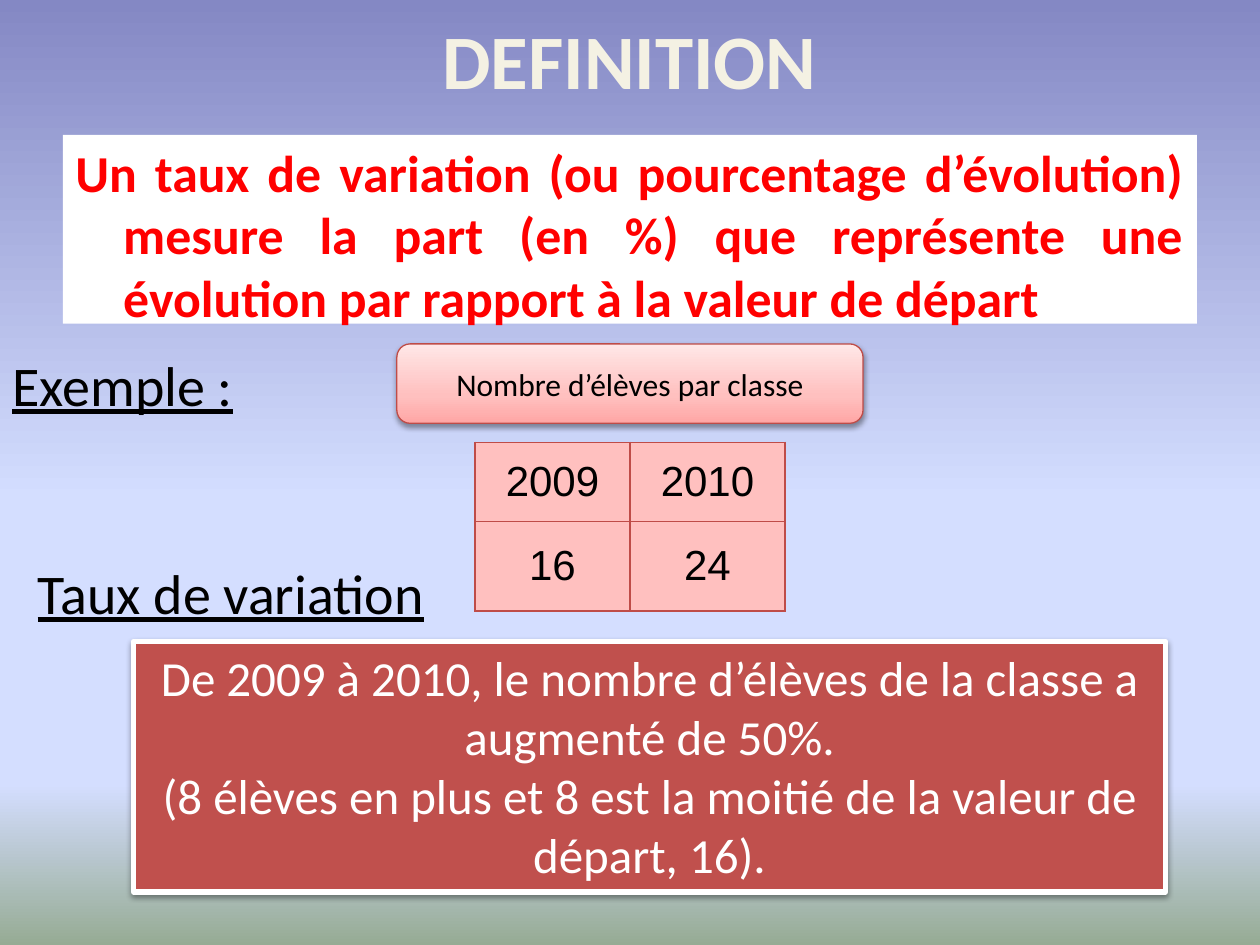
"""Build the slide that defines a rate of change, with a class-size example."""
import lxml.etree
import pptx
import pptx.dml.color
import pptx.enum.shapes
import pptx.enum.text
import pptx.oxml.ns
import pptx.util

Inches = pptx.util.Inches
Pt = pptx.util.Pt
qn = pptx.oxml.ns.qn
ALIGN = pptx.enum.text.PP_ALIGN
ANCHOR = pptx.enum.text.MSO_ANCHOR
SHAPE = pptx.enum.shapes.MSO_SHAPE
color = pptx.dml.color.RGBColor.from_string


def write(text_frame, lines, hue, alignment, anchor, formats):
    text_frame.word_wrap = True
    text_frame.vertical_anchor = anchor
    for index, line in enumerate(lines):
        paragraph = text_frame.add_paragraph() if index else text_frame.paragraphs[0]
        paragraph.alignment = alignment
        run = paragraph.add_run()
        run.text = line
        run.font.color.rgb = color(hue)
        for name, value in formats.items():
            setattr(run.font, name, value)


def apply_gradient(fill, element, stops, angle):
    fill.gradient()
    fill.gradient_angle = angle
    stop_list = next(element.iter(qn("a:gsLst")))
    for stop in list(stop_list):
        stop_list.remove(stop)
    for position, hue in stops:
        stop = lxml.etree.SubElement(stop_list, qn("a:gs"), pos=str(position * 1000))
        lxml.etree.SubElement(stop, qn("a:srgbClr"), val=hue)


presentation = pptx.Presentation()
presentation.slide_width = Inches(10)
presentation.slide_height = Inches(7.5)
slide = presentation.slides.add_slide(presentation.slide_layouts[6])
apply_gradient(slide.background.fill, slide.element,
               [(0, "8488C4"), (53, "D4DEFF"), (83, "D4DEFF"), (100, "96AB94")], 270)

heading = {"name": "Calibri", "size": Pt(32), "underline": True}
text_boxes = [
    ((0.5, 0, 9, 0.94), "DEFINITION", "F4F1E3", ALIGN.CENTER, ANCHOR.MIDDLE,
     {"name": "Calibri", "size": Pt(44), "bold": True}),
    ((0, 2.73, 10, 0.64), "Exemple :", "000000", ALIGN.LEFT, ANCHOR.TOP, heading),
    ((0.2, 4.38, 3.62, 0.64), "Taux de variation", "000000", ALIGN.LEFT, ANCHOR.TOP, heading),
]
for place, text, hue, alignment, anchor, formats in text_boxes:
    text_box = slide.shapes.add_textbox(*map(Inches, place))
    write(text_box.text_frame, [text], hue, alignment, anchor, formats)

definition = slide.shapes.add_shape(SHAPE.RECTANGLE, Inches(0.5), Inches(1.07), Inches(9), Inches(1.5))
definition.shadow.inherit = False
definition.fill.solid()
definition.fill.fore_color.rgb = color("FFFFFF")
definition.line.fill.background()
write(definition.text_frame,
      ["Un taux de variation (ou pourcentage d’évolution) mesure la part (en %) "
       "que représente une évolution par rapport à la valeur de départ"],
      "FF0000", ALIGN.JUSTIFY, ANCHOR.TOP, {"name": "Calibri", "size": Pt(29.6), "bold": True})
paragraph = definition.text_frame.paragraphs[0]
paragraph.space_before = Pt(6)
indent = paragraph._p.get_or_add_pPr()
indent.set("marL", str(Inches(0.38)))
indent.set("indent", str(Inches(-0.38)))

values = [["2009", "2010"], ["16", "24"]]
table = slide.shapes.add_table(2, 2, Inches(3.77), Inches(3.51), Inches(2.46), Inches(1.34)).table
table.first_row = False
table.horz_banding = False
for column in table.columns:
    column.width = Inches(1.23)
for row, height, row_values in zip(table.rows, (0.63, 0.71), values):
    row.height = Inches(height)
    for cell, value in zip(row.cells, row_values):
        cell.margin_left = cell.margin_right = cell.margin_top = cell.margin_bottom = 0
        cell.vertical_anchor = ANCHOR.MIDDLE
        write(cell.text_frame, [value], "000000", ALIGN.CENTER, None, {"name": "Arial", "size": Pt(24)})
        cell.vertical_anchor = ANCHOR.MIDDLE
        properties = cell._tc.get_or_add_tcPr()
        for side in ("a:lnL", "a:lnR", "a:lnT", "a:lnB"):
            border = lxml.etree.SubElement(properties, qn(side), w=str(Pt(0.75)))
            border_fill = lxml.etree.SubElement(border, qn("a:solidFill"))
            lxml.etree.SubElement(border_fill, qn("a:srgbClr"), val="BF4C48")
        cell.fill.solid()
        cell.fill.fore_color.rgb = color("FFC0BF")

caption = slide.shapes.add_shape(SHAPE.ROUNDED_RECTANGLE, Inches(3.15), Inches(2.73), Inches(3.7), Inches(0.63))
apply_gradient(caption.fill, caption.element, [(0, "FFA6A5"), (35, "FFC0BF"), (100, "FFE7E7")], 90)
write(caption.text_frame, ["Nombre d’élèves par classe"], "000000", ALIGN.CENTER, ANCHOR.MIDDLE,
      {"name": "Calibri", "size": Pt(18)})

conclusion = slide.shapes.add_shape(SHAPE.RECTANGLE, Inches(1.06), Inches(5.09), Inches(8.19), Inches(1.99))
conclusion.fill.solid()
conclusion.fill.fore_color.rgb = color("C0504D")
write(conclusion.text_frame,
      ["De 2009 à 2010, le nombre d’élèves de la classe a augmenté de 50%.",
       "(8 élèves en plus et 8 est la moitié de la valeur de départ, 16)."],
      "FFFFFF", ALIGN.CENTER, ANCHOR.TOP, {"name": "Calibri", "size": Pt(28)})

for shape, hue, width in [(caption, "BF4C48", 0.75), (conclusion, "FFFFFF", 3)]:
    shape.line.color.rgb = color(hue)
    shape.line.width = Pt(width)
    shape.shadow.inherit = False
    effects = next(shape.element.iter(qn("a:effectLst")))
    shadow = lxml.etree.SubElement(effects, qn("a:outerShdw"), blurRad=str(Pt(3.1)), dist=str(Pt(1.6)),
                                   dir="5400000", rotWithShape="0")
    shadow_color = lxml.etree.SubElement(shadow, qn("a:srgbClr"), val="000000")
    lxml.etree.SubElement(shadow_color, qn("a:alpha"), val="38000")

presentation.save("out.pptx")
